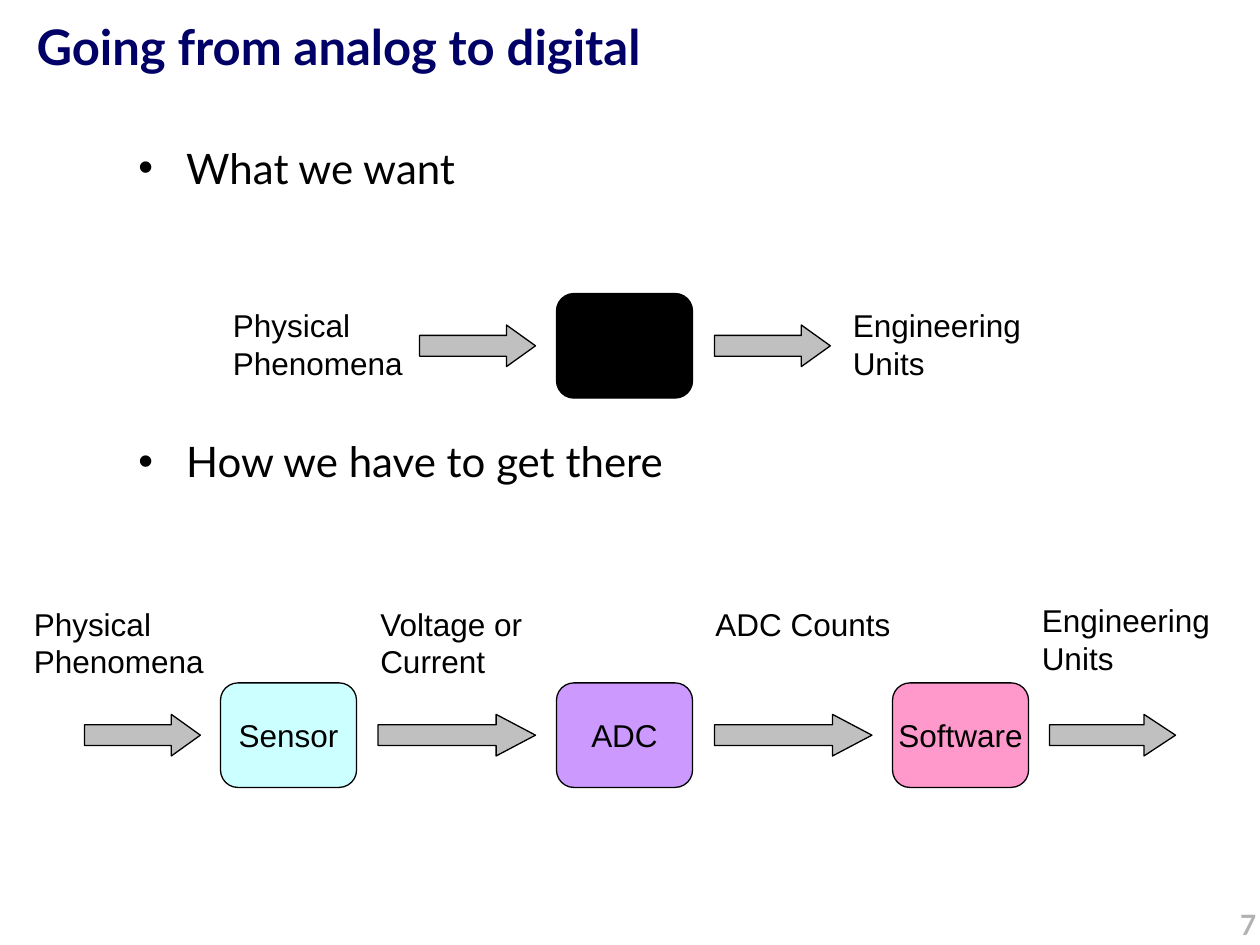
from dataclasses import dataclass

from lxml.etree import SubElement
from pptx import Presentation
from pptx.dml.color import RGBColor
from pptx.enum.shapes import MSO_SHAPE
from pptx.enum.text import MSO_ANCHOR, PP_ALIGN
from pptx.oxml.ns import qn
from pptx.util import Inches, Pt

BLACK = "000000"
ARROW_GRAY = "C0C0C0"
BOX_WIDTH, BOX_HEIGHT = 1.08, 0.83
ARROW_HEIGHT = 0.33
LABEL_WIDTH = 1.67
# Stages sit on an even grid of columns
FIRST_COLUMN, COLUMN_STEP = 1.75, 8 / 3
BULLET_INDENT = 0.38

TITLE_FORMAT = {"name": "Lato", "size": Pt(28), "bold": True}
BULLET_FORMAT = {"name": "Lato", "size": Pt(24)}
LABEL_FORMAT = {"name": "Arial", "size": Pt(18)}
NUMBER_FORMAT = {"name": "Lato", "size": Pt(16), "bold": True}


@dataclass
class Stage:
    column: int
    fill: str
    name: str = ""


@dataclass
class Arrow:
    left: float
    width: float


@dataclass
class Label:
    left: float
    top: float
    lines: tuple[str, ...]


@dataclass
class Flow:
    top: float
    stages: list[Stage]
    arrows: list[Arrow]
    labels: list[Label]


PHENOMENA = ("Physical", "Phenomena")
UNITS = ("Engineering Units",)

FLOWS = [
    # What we want: one black box
    Flow(
        2.33,
        [Stage(1, BLACK)],
        [Arrow(3.33, 0.92), Arrow(5.67, 0.92)],
        [Label(1.75, 2.38, PHENOMENA), Label(6.67, 2.38, UNITS)],
    ),
    # How we get there: sensor, converter, software
    Flow(
        5.42,
        [Stage(0, "CCFFFF", "Sensor"), Stage(1, "CC99FF", "ADC"),
         Stage(2, "FF99CC", "Software")],
        [Arrow(0.67, 0.92), Arrow(3, 1.25), Arrow(5.67, 1.25), Arrow(8.33, 1)],
        [Label(0.17, 4.75, PHENOMENA),
         Label(2.92, 4.75, ("Voltage or", "Current")),
         Label(5.58, 4.75, ("ADC Counts",)),
         Label(8.17, 4.72, UNITS)],
    ),
]


def color(value: str) -> RGBColor:
    return RGBColor.from_string(value)


def write(frame, lines: tuple[str, ...], text_format: dict,
          text_color: str = BLACK, align=PP_ALIGN.LEFT) -> None:
    for index, line in enumerate(lines):
        paragraph = frame.add_paragraph() if index else frame.paragraphs[0]
        paragraph.alignment = align
        run = paragraph.add_run()
        run.text = line
        for attribute, value in text_format.items():
            setattr(run.font, attribute, value)
        run.font.color.rgb = color(text_color)


def add_text(slide, left: float, top: float, width: float, height: float):
    frame = slide.shapes.add_textbox(
        Inches(left), Inches(top), Inches(width), Inches(height)).text_frame
    frame.word_wrap = True
    return frame


def add_outlined(slide, kind, left: float, top: float, width: float,
                 height: float, fill: str):
    shape = slide.shapes.add_shape(
        kind, Inches(left), Inches(top), Inches(width), Inches(height))
    shape.shadow.inherit = False
    shape.fill.solid()
    shape.fill.fore_color.rgb = color(fill)
    shape.line.color.rgb = color(BLACK)
    shape.line.width = Pt(0.75)
    return shape


def draw_stage(slide, stage: Stage, top: float) -> None:
    left = FIRST_COLUMN + stage.column * COLUMN_STEP
    box = add_outlined(slide, MSO_SHAPE.ROUNDED_RECTANGLE, left, top,
                       BOX_WIDTH, BOX_HEIGHT, stage.fill)
    if stage.name:
        box.text_frame.word_wrap = False
        box.text_frame.vertical_anchor = MSO_ANCHOR.MIDDLE
        write(box.text_frame, (stage.name,), LABEL_FORMAT,
              align=PP_ALIGN.CENTER)


def draw_arrow(slide, arrow: Arrow, flow_top: float) -> None:
    top = flow_top + (BOX_HEIGHT - ARROW_HEIGHT) / 2
    shape = add_outlined(slide, MSO_SHAPE.RIGHT_ARROW, arrow.left, top,
                         arrow.width, ARROW_HEIGHT, ARROW_GRAY)
    # The head takes a quarter of the arrow's length
    shape.adjustments[1] = arrow.width / 4 / ARROW_HEIGHT


def draw_flow(slide, flow: Flow) -> None:
    for stage in flow.stages:
        draw_stage(slide, stage, flow.top)
    for arrow in flow.arrows:
        draw_arrow(slide, arrow, flow.top)
    for label in flow.labels:
        frame = add_text(slide, label.left, label.top, LABEL_WIDTH, 0.7)
        write(frame, label.lines, LABEL_FORMAT)


def draw_title(slide) -> None:
    title = slide.shapes.title
    title.left, title.top = Inches(0.19), Inches(0.08)
    title.width, title.height = Inches(9.71), Inches(1)
    title.text_frame.vertical_anchor = MSO_ANCHOR.TOP
    write(title.text_frame, ("Going from analog to digital",), TITLE_FORMAT,
          "000066")


def draw_bullets(slide) -> None:
    frame = add_text(slide, 1, 1.08, 8, 5.33)
    write(frame, ("What we want", "How we have to get there"), BULLET_FORMAT)
    for paragraph in frame.paragraphs:
        properties = paragraph._p.get_or_add_pPr()
        properties.set("marL", str(Inches(BULLET_INDENT)))
        properties.set("indent", str(-Inches(BULLET_INDENT)))
        SubElement(properties, qn("a:buFont"), typeface="Arial")
        SubElement(properties, qn("a:buChar"), char="•")
    # Leave room for the first flow between the bullets
    frame.paragraphs[1].space_before = Pt(139)


def main() -> None:
    presentation = Presentation()
    presentation.slide_width = Inches(10)
    presentation.slide_height = Inches(7.5)
    slide = presentation.slides.add_slide(presentation.slide_layouts[5])

    draw_title(slide)
    draw_bullets(slide)
    for flow in FLOWS:
        draw_flow(slide, flow)

    # Page number
    page_number = add_text(slide, 6.9, 7.15, 3.17, 0.5)
    write(page_number, ("7",), NUMBER_FORMAT, "B2B2B2", PP_ALIGN.RIGHT)

    presentation.save("out.pptx")


if __name__ == "__main__":
    main()
